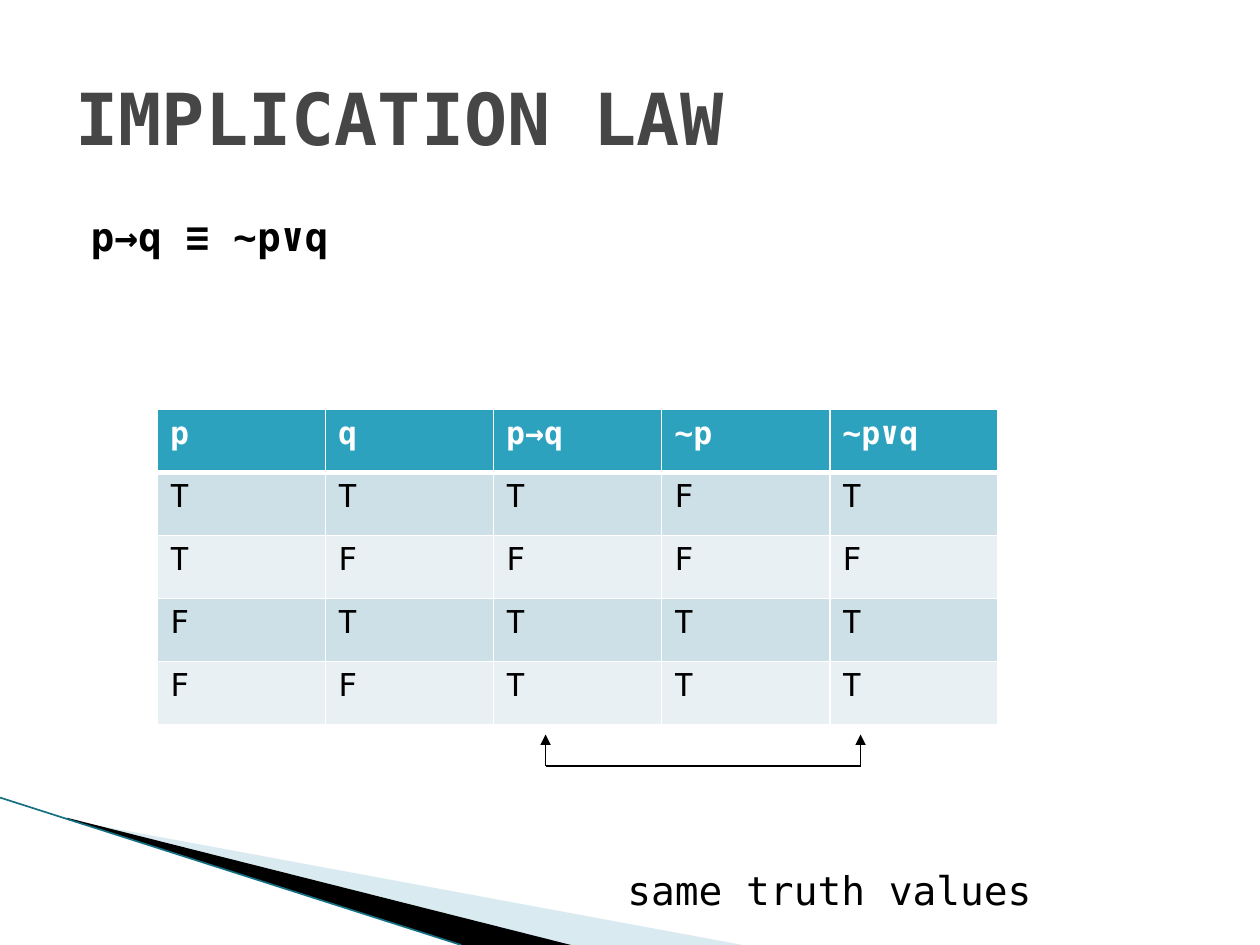
from lxml import etree
from pptx import Presentation
from pptx.dml.color import RGBColor
from pptx.enum.shapes import MSO_CONNECTOR
from pptx.enum.text import MSO_ANCHOR
from pptx.oxml.ns import qn
from pptx.util import Inches, Pt

STRAIGHT = MSO_CONNECTOR.STRAIGHT
TOP, MIDDLE = MSO_ANCHOR.TOP, MSO_ANCHOR.MIDDLE
FONT = "DejaVu Sans Mono"
BLACK = RGBColor(0x00, 0x00, 0x00)
WHITE = RGBColor(0xFF, 0xFF, 0xFF)
GREY = RGBColor(0x46, 0x46, 0x46)
HEADER = RGBColor(0x2D, 0xA2, 0xBF)
BANDS = (RGBColor(0xE8, 0xF0, 0xF4), RGBColor(0xCD, 0xE0, 0xE8))
PALE = RGBColor(0xA0, 0xCB, 0xDC)
TEAL = RGBColor(0x14, 0x70, 0x82)

TRUTH_TABLE = (
    ("p", "q", "p→q", "~p", "~p∨q"),
    "TTTFT",
    "TFFFF",
    "FTTTT",
    "FFTTT",
)


class SlideBuilder:
    """Draws styled elements on the current slide."""

    def __init__(self, slide):
        self.slide = slide

    def style(self, frame, size, color, bold):
        for para in frame.paragraphs:
            for span in para.runs:
                span.font.name = FONT
                span.font.size = Pt(size)
                span.font.bold = bold
                span.font.color.rgb = color

    def text(self, words, left, top, width, height, size, color=BLACK, bold=False, anchor=TOP):
        box = self.slide.shapes.add_textbox(Inches(left), Inches(top), Inches(width), Inches(height))
        frame = box.text_frame
        frame.word_wrap = True
        frame.vertical_anchor = anchor
        frame.margin_left = frame.margin_right = frame.margin_top = frame.margin_bottom = 0
        frame.text = words
        self.style(frame, size, color, bold)

    def polygon(self, points, color, alpha=100):
        start, *rest = [(Inches(x), Inches(y)) for x, y in points]
        builder = self.slide.shapes.build_freeform(*start)
        builder.add_line_segments(rest, close=True)
        shape = builder.convert_to_shape()
        shape.shadow.inherit = False
        shape.fill.solid()
        shape.fill.fore_color.rgb = color
        shape.line.fill.background()
        if alpha < 100:
            fill = shape._element.spPr.find(qn("a:solidFill"))
            etree.SubElement(fill[0], qn("a:alpha"), val=str(alpha * 1000))

    def line(self, start, end, color=BLACK, width=0.75, arrow=False):
        points = [Inches(value) for value in (*start, *end)]
        connector = self.slide.shapes.add_connector(STRAIGHT, *points)
        connector.line.color.rgb = color
        connector.line.width = Pt(width)
        if arrow:
            etree.SubElement(connector.line._get_or_add_ln(), qn("a:tailEnd"), type="triangle")
        etree.SubElement(connector._element.spPr, qn("a:effectLst"))

    def borders(self, cell, top, bottom):
        properties = cell._tc.get_or_add_tcPr()
        for side, width in (("L", 1), ("R", 1), ("T", top), ("B", bottom)):
            edge = etree.SubElement(properties, qn(f"a:ln{side}"), w=str(Pt(width)))
            fill = etree.SubElement(edge, qn("a:solidFill"))
            etree.SubElement(fill, qn("a:srgbClr"), val=str(WHITE))

    def table(self, rows, left, top, width, height):
        frame = self.slide.shapes.add_table(
            len(rows), len(rows[0]), Inches(left), Inches(top), Inches(width), Inches(height))
        for i, values in enumerate(rows):
            header = i == 0
            for j, value in enumerate(values):
                cell = frame.table.cell(i, j)
                self.borders(cell, 3 if i == 1 else 1, 3 if header else 1)
                cell.fill.solid()
                cell.fill.fore_color.rgb = HEADER if header else BANDS[i % 2]
                cell.text_frame.text = value
                self.style(cell.text_frame, 18, WHITE if header else BLACK, header)


def main():
    deck = Presentation()
    deck.slide_width, deck.slide_height = Inches(10), Inches(7.5)
    page = SlideBuilder(deck.slides.add_slide(deck.slide_layouts[6]))

    page.polygon([(0.55, 6.51), (5.95, 7.51), (4.56, 7.51), (0.55, 6.5)], PALE, alpha=40)
    page.polygon([(0.53, 6.49), (4.57, 7.51), (3.72, 7.52), (0.54, 6.5)], BLACK)
    page.line((0, 6.33), (3.66, 7.5), TEAL, 0.95)

    page.text("IMPLICATION LAW", 0.6, 0.3, 8.8, 1.25, 41, GREY, True, MIDDLE)
    page.text("p→q ≡ ~p∨q", 0.72, 1.68, 8.6, 0.4, 22.6, bold=True)
    page.table(TRUTH_TABLE, 1.25, 3.25, 6.67, 2.5)

    bracket_left, bracket_right, bracket_y = 4.33, 6.83, 6.08
    for x in (bracket_left, bracket_right):
        page.line((x, bracket_y), (x, 5.83), arrow=True)
    page.line((bracket_left, bracket_y), (bracket_right, bracket_y))
    page.text("same truth values", 4.98, 6.87, 4.4, 0.4, 22.6)

    deck.save("out.pptx")


if __name__ == "__main__":
    main()
